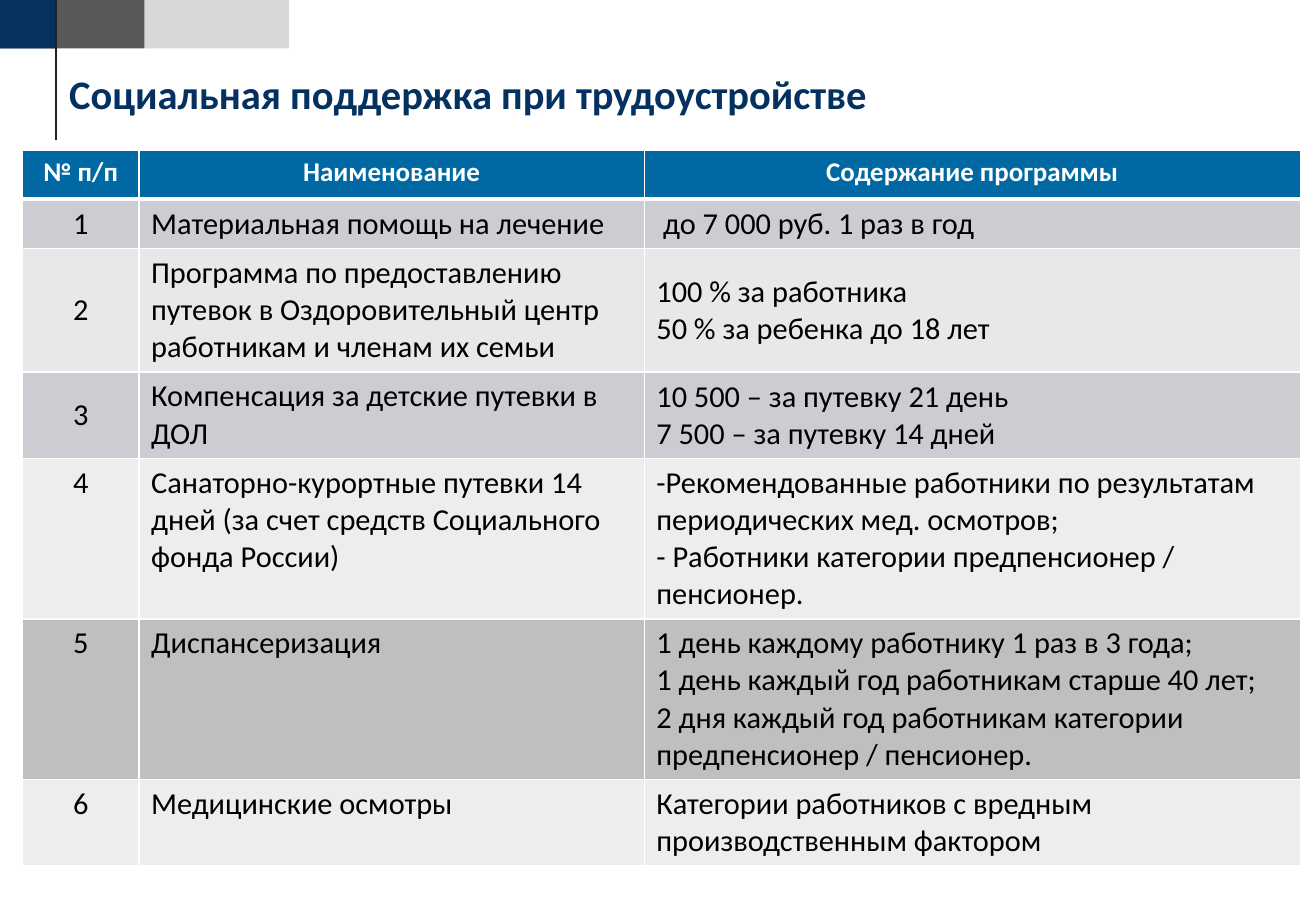
from lxml import etree
from pptx import Presentation
from pptx.dml.color import RGBColor
from pptx.enum.shapes import MSO_CONNECTOR, MSO_SHAPE
from pptx.enum.text import MSO_ANCHOR, PP_ALIGN
from pptx.oxml.ns import qn
from pptx.util import Pt

RECT = MSO_SHAPE.RECTANGLE
LINE = MSO_CONNECTOR.STRAIGHT
TOP, MIDDLE = MSO_ANCHOR.TOP, MSO_ANCHOR.MIDDLE
LEFT, CENTER = PP_ALIGN.LEFT, PP_ALIGN.CENTER

WHITE = RGBColor(0xFF, 0xFF, 0xFF)
BLACK = RGBColor(0, 0, 0)
NAVY = RGBColor(0x06, 0x32, 0x5F)
TITLE = RGBColor(0x04, 0x31, 0x5F)
DARK = RGBColor(0x59, 0x59, 0x59)
LIGHT = RGBColor(0xD8, 0xD8, 0xD8)
RULE = RGBColor(0x21, 0x21, 0x21)
BLUE = RGBColor(0x00, 0x69, 0xA4)
COOL = RGBColor(0xCC, 0xCD, 0xD2)
PALE = RGBColor(0xE7, 0xE8, 0xEA)
GRAY = RGBColor(0xBF, 0xBF, 0xBF)
MIST = RGBColor(0xED, 0xED, 0xED)

HEAD_FONT = {"name": "Calibri", "size": Pt(24), "bold": True}
COL_FONT = {"name": "Calibri", "size": Pt(16), "bold": True}
BODY_FONT = {"name": "Calibri", "size": Pt(18), "bold": False}

COLS = [69.1, 299.5, 388.8]
LINE_H, PAD = 22, 7.2

# Each row: fill, text lines high, anchors of the three cells, texts
ROWS = [
    (BLUE, 1, (TOP, TOP, TOP), ("№ п/п", "Наименование", "Содержание программы")),
    (COOL, 1, (MIDDLE, TOP, TOP),
     ("1", "Материальная помощь на лечение", " до 7 000 руб. 1 раз в год")),
    (PALE, 3, (MIDDLE, TOP, MIDDLE),
     ("2", "Программа по предоставлению путевок в Оздоровительный центр "
           "работникам и членам их семьи",
      "100 % за работника\n50 % за ребенка до 18 лет")),
    (COOL, 2, (MIDDLE, TOP, MIDDLE),
     ("3", "Компенсация за детские путевки в ДОЛ",
      "10 500 – за путевку 21 день\n7 500 – за путевку 14 дней")),
    (MIST, 4, (TOP, TOP, TOP),
     ("4", "Санаторно-курортные путевки 14 дней "
           "(за счет средств Социального фонда России)",
      "-Рекомендованные работники по результатам периодических мед. осмотров;\n"
      "- Работники категории предпенсионер / пенсионер.")),
    (GRAY, 4, (TOP, TOP, TOP),
     ("5", "Диспансеризация",
      "1 день каждому работнику 1 раз в 3 года;\n"
      "1 день каждый год работникам старше 40 лет;\n"
      "2 дня каждый год работникам категории предпенсионер / пенсионер.")),
    (MIST, 2, (TOP, TOP, TOP),
     ("6", "Медицинские осмотры",
      "Категории работников с вредным производственным фактором")),
]


def style(para, font, color, align=LEFT):
    para.alignment = align
    for key, value in font.items():
        setattr(para.font, key, value)
    para.font.color.rgb = color


def border(cell, side, width):
    line = etree.SubElement(cell._tc.get_or_add_tcPr(), qn(f"a:ln{side}"),
                            w=str(Pt(width)))
    fill = etree.SubElement(line, qn("a:solidFill"))
    etree.SubElement(fill, qn("a:srgbClr"), val=str(WHITE))


def draw_band(slide, x, y, high):
    # Coloured blocks, back to front
    for left, width, color in ((85, 86.4, LIGHT), (-0.7, 86.4, DARK), (0, 33.2, NAVY)):
        block = slide.shapes.add_shape(RECT, Pt(x + left), Pt(y), Pt(width), Pt(28.8))
        block.shadow.inherit = False
        block.fill.solid()
        block.fill.fore_color.rgb = color
        block.line.fill.background()
    # Thin vertical rule
    rule = slide.shapes.add_connector(LINE, Pt(x + 33.2), Pt(y + high),
                                      Pt(x + 33.2), Pt(y))
    rule.line.color.rgb = RULE
    rule.line.width = Pt(0.75)
    etree.SubElement(rule._element.spPr, qn("a:effectLst"))


def draw_title(slide, x, y, wide, high):
    frame = slide.shapes.add_textbox(Pt(x), Pt(y), Pt(wide), Pt(high)).text_frame
    frame.word_wrap = True
    frame.vertical_anchor = MIDDLE
    for side in ("left", "right", "top", "bottom"):
        setattr(frame, f"margin_{side}", Pt(3.6))
    frame.text = "Социальная поддержка при трудоустройстве"
    style(frame.paragraphs[0], HEAD_FONT, TITLE)


def draw_table(slide, x, y):
    highs = [lines * LINE_H + PAD for _, lines, _, _ in ROWS]
    table = slide.shapes.add_table(len(ROWS), len(COLS), Pt(x), Pt(y),
                                   Pt(sum(COLS)), Pt(sum(highs))).table
    for col, width in zip(table.columns, COLS):
        col.width = Pt(width)
    for r, (fill, _, anchors, texts) in enumerate(ROWS):
        table.rows[r].height = Pt(highs[r])
        head = r == 0
        sides = {"L": 1, "R": 1, "T": 3 if r == 1 else 1, "B": 3 if head else 1}
        for c, text in enumerate(texts):
            cell = table.cell(r, c)
            cell.text = text
            cell.vertical_anchor = anchors[c]
            for side, width in sides.items():
                border(cell, side, width)
            cell.fill.solid()
            cell.fill.fore_color.rgb = fill
            for para in cell.text_frame.paragraphs:
                style(para, COL_FONT if head else BODY_FONT,
                      WHITE if head else BLACK,
                      CENTER if head or c == 0 else LEFT)


def main():
    deck = Presentation()
    deck.slide_width, deck.slide_height = Pt(780), Pt(540)
    slide = deck.slides.add_slide(deck.slide_layouts[6])
    draw_band(slide, 0, 0, 82.8)
    draw_title(slide, 37.4, 36, 692, 38)
    draw_table(slide, 13.3, 88.9)
    deck.save("out.pptx")


if __name__ == "__main__":
    main()
